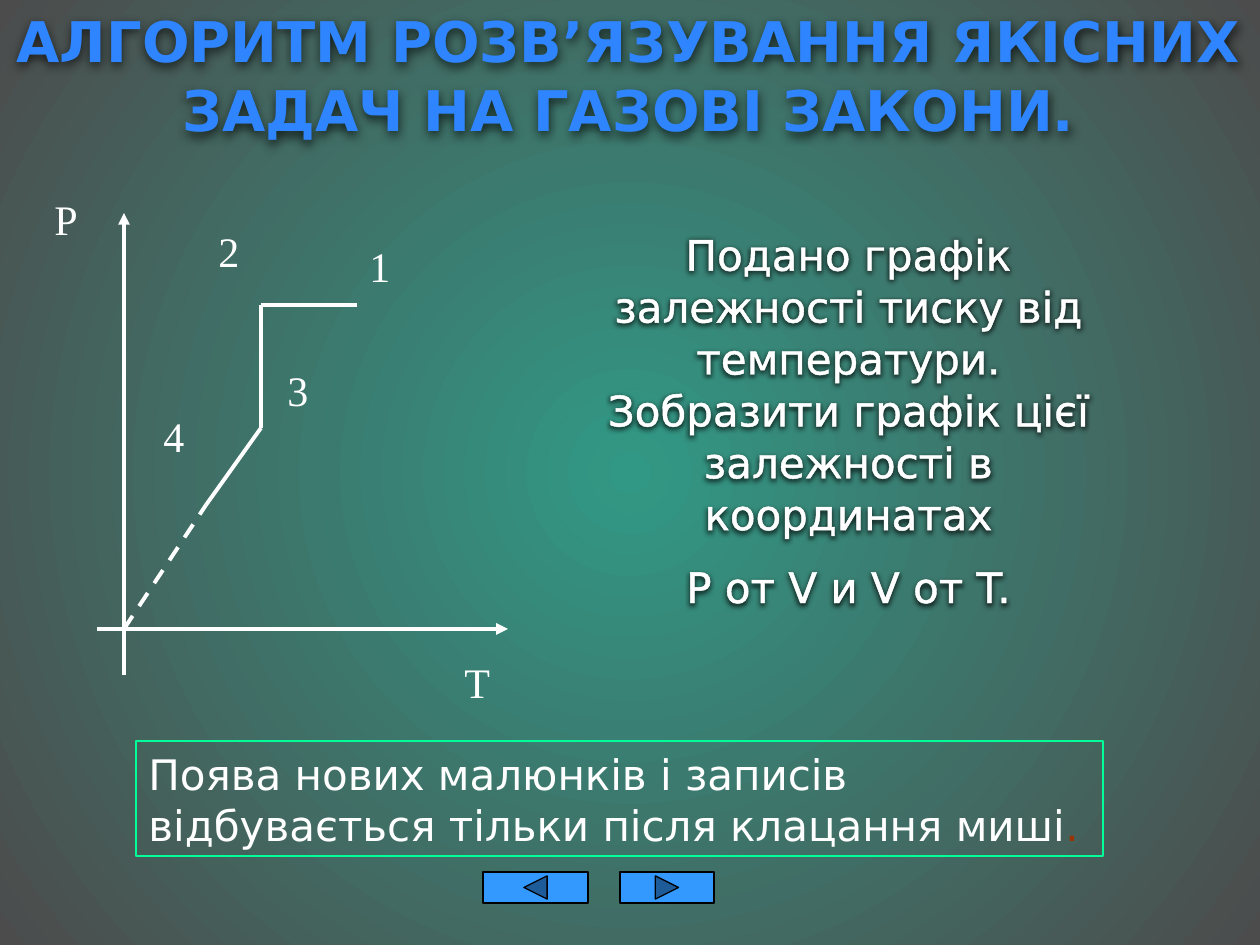
from typing import NamedTuple

from lxml.etree import SubElement
from pptx import Presentation
from pptx.dml.color import RGBColor
from pptx.enum.dml import MSO_LINE
from pptx.enum.shapes import MSO_CONNECTOR, MSO_SHAPE
from pptx.enum.text import MSO_AUTO_SIZE, PP_ALIGN
from pptx.oxml import parse_xml
from pptx.oxml.ns import nsdecls, qn
from pptx.util import Pt

EMU_PER_PX = 914400 / 126
SANS, SERIF = "DejaVu Sans", "Times New Roman"
LINE_SPACING = {SANS: 1.03, SERIF: 1.12}
COLORS = {
    "white": "FFFFFF", "black": "000000", "frame": "00FF99",
    "stop": "993300", "button": "3399FF",
}
BACKGROUND_STOPS = [(0, "319885"), (100, "4C4C4C")]
TITLE_STOPS = [(0, "619CFF"), (49, "2F85FF"), (50, "117FED"),
               (92, "1771CC"), (100, "166FC8")]


class Box(NamedTuple):
    x: int
    y: int
    w: int
    h: int


class Label(NamedTuple):
    text: str
    box: Box


class Segment(NamedTuple):
    start: tuple[int, int]
    end: tuple[int, int]
    arrow: bool = False
    dashed: bool = False


class Button(NamedTuple):
    kind: MSO_SHAPE
    box: Box


ORIGIN, RAY, KNEE, CORNER, END = (124, 629), (206, 505), (261, 428), (261, 305), (357, 305)
SEGMENTS = [
    Segment((ORIGIN[0], 675), (ORIGIN[0], 213), arrow=True),
    Segment((97, ORIGIN[1]), (508, ORIGIN[1]), arrow=True),
    Segment(ORIGIN, RAY, dashed=True),
    Segment(RAY, KNEE),
    Segment(KNEE, CORNER),
    Segment(CORNER, END),
]
LABELS = [
    Label("T", Box(452, 644, 68, 67)),
    Label("P", Box(42, 181, 69, 67)),
    Label("1", Box(357, 228, 82, 67)),
    Label("2", Box(206, 213, 82, 67)),
    Label("3", Box(275, 352, 96, 67)),
    Label("4", Box(151, 398, 54, 67)),
]
BUTTONS = [
    Button(MSO_SHAPE.ACTION_BUTTON_BACK_OR_PREVIOUS, Box(483, 872, 105, 31)),
    Button(MSO_SHAPE.ACTION_BUTTON_FORWARD_OR_NEXT, Box(620, 872, 94, 31)),
]


def px(n: int) -> int:
    return round(n * EMU_PER_PX)


def rgb(name: str) -> RGBColor:
    return RGBColor.from_string(COLORS[name])


def gradient(stops: list, direction: str):
    gs = "".join(f'<a:gs pos="{pos * 1000}"><a:srgbClr val="{color}"/></a:gs>'
                 for pos, color in stops)
    return parse_xml(f'<a:gradFill {nsdecls("a")} rotWithShape="1">'
                     f'<a:gsLst>{gs}</a:gsLst>{direction}</a:gradFill>')


def write(sp, paragraphs: list, *, size: int = 24, font: str = SANS, bold: bool = False,
          align=PP_ALIGN.LEFT, outline: float = 0, stops: list | None = None) -> None:
    """Fill a shape with paragraphs, each a list of (text, colour name) runs."""
    tf = sp.text_frame
    tf.word_wrap = True
    tf.auto_size = MSO_AUTO_SIZE.SHAPE_TO_FIT_TEXT
    for i, runs in enumerate(paragraphs):
        p = tf.add_paragraph() if i else tf.paragraphs[0]
        p.alignment = align
        p.line_spacing = LINE_SPACING[font]
        if i:
            p.space_before = Pt(size / 2)
        for text, color in runs:
            r = p.add_run()
            r.text = text
            r.font.size, r.font.name, r.font.bold = Pt(size), font, bold
            rpr = r.font._element
            if stops:
                rpr.insert(0, gradient(stops, '<a:lin ang="5400000" scaled="0"/>'))
            else:
                r.font.color.rgb = rgb(color)
            if outline:
                rpr.insert(0, parse_xml(
                    f'<a:ln {nsdecls("a")} w="{Pt(outline)}"><a:solidFill>'
                    f'<a:srgbClr val="{COLORS[color]}"/></a:solidFill></a:ln>'))


def add_text(shapes, box: Box, paragraphs: list, **fmt):
    sp = shapes.add_textbox(*map(px, box))
    write(sp, paragraphs, **fmt)
    return sp


def add_halo(sp, blur: int, dist: int) -> None:
    """Put a soft dark shadow behind the text of an unfilled box."""
    sp._element.spPr.append(parse_xml(
        f'<a:effectLst {nsdecls("a")}><a:outerShdw blurRad="{px(blur)}" dist="{px(dist)}" '
        'dir="5400000" algn="tl" rotWithShape="0"><a:srgbClr val="000000">'
        '<a:alpha val="65000"/></a:srgbClr></a:outerShdw></a:effectLst>'))


def add_segment(shapes, seg: Segment) -> None:
    s = shapes.add_connector(MSO_CONNECTOR.STRAIGHT, *map(px, seg.start + seg.end))
    s.line.color.rgb = rgb("white")
    s.line.width = Pt(2.25)
    if seg.dashed:
        s.line.dash_style = MSO_LINE.DASH
    if seg.arrow:
        SubElement(s.line._get_or_add_ln(), qn("a:tailEnd"), type="triangle")
    SubElement(s._element.spPr, qn("a:effectLst"))


def add_panel(shapes, kind, box: Box, line: str, fill: str | None = None):
    sp = shapes.add_shape(kind, *map(px, box))
    sp.shadow.inherit = False
    if fill:
        sp.fill.solid()
        sp.fill.fore_color.rgb = rgb(fill)
    else:
        sp.fill.background()
    sp.line.color.rgb = rgb(line)
    sp.line.width = Pt(0.75)
    return sp


def main() -> None:
    prs = Presentation()
    prs.slide_width, prs.slide_height = px(1260), px(945)
    slide = prs.slides.add_slide(prs.slide_layouts[6])
    slide.background.fill.solid()
    bg = slide.element.find(".//" + qn("p:bgPr"))
    bg.replace(bg[0], gradient(BACKGROUND_STOPS, '<a:path path="circle"><a:fillToRect '
                               'l="50000" t="50000" r="50000" b="50000"/></a:path>'))

    graph = slide.shapes.add_group_shape().shapes
    for seg in SEGMENTS:
        add_segment(graph, seg)
    for label in LABELS:
        add_text(graph, label.box, [[(label.text, "white")]], font=SERIF)

    task = add_text(slide.shapes, Box(581, 221, 535, 394), [
        [("Подано графік залежності тиску від температури. "
          "Зобразити графік цієї залежності в координатах", "white")],
        [("P от V и V от T.", "white")],
    ], align=PP_ALIGN.CENTER, outline=1.45)
    add_halo(task, blur=5, dist=2)

    note = add_panel(slide.shapes, MSO_SHAPE.RECTANGLE, Box(136, 741, 967, 115), "frame")
    write(note, [[("Поява нових малюнків і записів відбувається тільки "
                   "після клацання миші", "white"), (".", "stop")]])

    for button in BUTTONS:
        add_panel(slide.shapes, button.kind, button.box, "black", "button")

    title = add_text(slide.shapes, Box(-2, -2, 1262, 149), [
        [("АЛГОРИТМ РОЗВ’ЯЗУВАННЯ ЯКІСНИХ ЗАДАЧ НА ГАЗОВІ ЗАКОНИ.", "white")],
    ], size=32, bold=True, align=PP_ALIGN.CENTER, stops=TITLE_STOPS)
    add_halo(title, blur=10, dist=4)
    prs.save("out.pptx")


if __name__ == "__main__":
    main()
